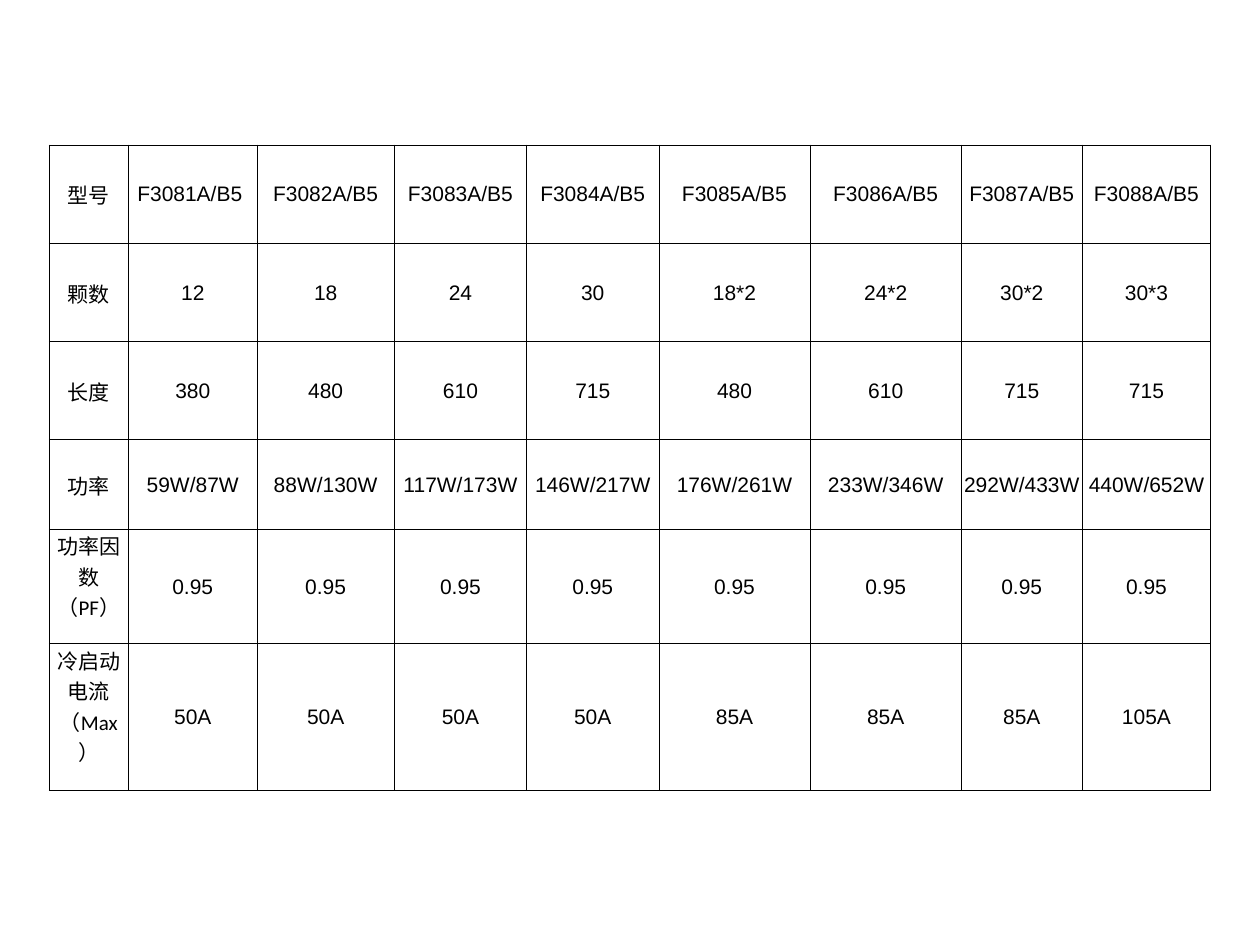
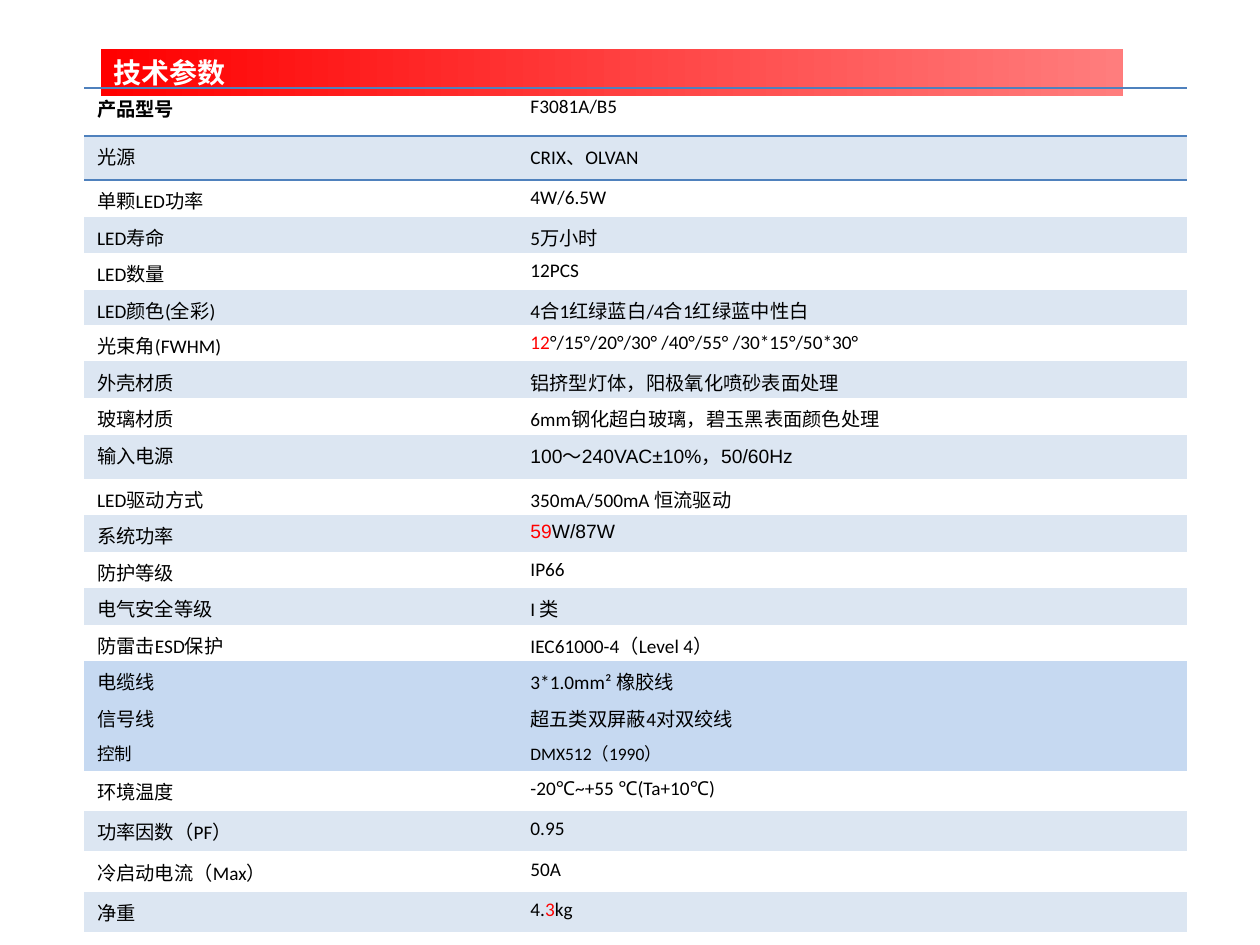
from dataclasses import dataclass
from lxml.etree import SubElement
from pptx import Presentation
from pptx.dml.color import RGBColor
from pptx.enum.text import MSO_ANCHOR, MSO_AUTO_SIZE, PP_ALIGN
from pptx.oxml.ns import qn
from pptx.util import Inches, Pt


@dataclass(frozen=True)
class Theme:
    ink: str = "000000"
    white: str = "FFFFFF"
    accent: str = "FF0000"
    accent_fade: str = "FF7D7D"
    rule: str = "4F81BD"
    pale: str = "DCE6F2"
    cable: str = "C6D9F1"
    sans: str = "Arial"
    body: str = "Calibri"
    chinese: str = "Noto Sans CJK SC"
    title_size: int = 16
    model_size: int = 12
    parameter_size: int = 11
    small_size: int = 10
    plain_table: str = "{2D5ABB26-0587-4C30-8999-92F81FD0307C}"


@dataclass(frozen=True)
class Parameter:
    label: str
    value: tuple
    height: float = 2.9
    fill: str = None
    face: str = Theme.body
    size: int = Theme.parameter_size
    bold: bool = False


class Page:
    columns, rows = 100, 75

    def __init__(self, deck, theme, layout):
        self.deck = deck
        self.theme = theme
        self.slide = deck.slides.add_slide(deck.slide_layouts[layout])

    def across(self, count):
        return round(self.deck.slide_width * count / self.columns)

    def down(self, count):
        return round(self.deck.slide_height * count / self.rows)

    def span(self, para, text, face, size, color, bold=False):
        run = para.add_run()
        run.text = text
        run.font.name = face
        run.font.size = Pt(size)
        run.font.bold = bold
        run.font.color.rgb = RGBColor.from_string(color)
        east_asian = SubElement(run.font._element, qn("a:ea"))
        east_asian.set("typeface", self.theme.chinese)

    def title_band(self, text, left, top, width, height):
        theme = self.theme
        box = self.slide.shapes.title
        box.left, box.top = self.across(left), self.down(top)
        box.width, box.height = self.across(width), self.down(height)
        box.fill.gradient()
        box.fill.gradient_angle = 0
        for stop, color in zip(box.fill.gradient_stops, (theme.accent, theme.accent_fade)):
            stop.color.rgb = RGBColor.from_string(color)
        frame = box.text_frame
        frame.auto_size = MSO_AUTO_SIZE.NONE
        frame.vertical_anchor = MSO_ANCHOR.MIDDLE
        para = frame.paragraphs[0]
        para.alignment = PP_ALIGN.LEFT
        self.span(para, text, theme.chinese, theme.title_size, theme.white, True)

    def table(self, left, top, widths, heights):
        frame = self.slide.shapes.add_table(
            len(heights), len(widths), self.across(left), self.down(top),
            self.across(sum(widths)), self.down(sum(heights)))
        table = frame.table
        table.first_row = table.horz_banding = False
        table._tbl.tblPr.find(qn("a:tableStyleId")).text = self.theme.plain_table
        for column, width in zip(table.columns, widths):
            column.width = self.across(width)
        for row, height in zip(table.rows, heights):
            row.height = self.down(height)
        return table

    def cell(self, cell, parts, face, size, bold=False, fill=None, align=PP_ALIGN.LEFT,
             anchor=MSO_ANCHOR.TOP, margins=(0.1, 0.05, 0.1, 0), sides="", line=0, color=None):
        cell.margin_left, cell.margin_top, cell.margin_right, cell.margin_bottom = map(Inches, margins)
        cell.vertical_anchor = anchor
        properties = cell._tc.get_or_add_tcPr()
        for side in sides:
            border = SubElement(properties, qn(f"a:ln{side}"), w=str(Pt(line)))
            solid = SubElement(border, qn("a:solidFill"))
            SubElement(solid, qn("a:srgbClr"), val=color)
        if fill:
            cell.fill.solid()
            cell.fill.fore_color.rgb = RGBColor.from_string(fill)
        else:
            cell.fill.background()
        para = cell.text_frame.paragraphs[0]
        para.alignment = align
        for index, text in enumerate(parts):
            if text:
                ink = self.theme.accent if index % 2 else self.theme.ink
                self.span(para, text, face, size, ink, bold)


MODELS = (
    ("型号", "F3081A/B5 ", *(f"F308{number}A/B5" for number in range(2, 9))),
    ("颗数", "12", "18", "24", "30", "18*2", "24*2", "30*2", "30*3"),
    ("长度", "380", "480", "610", "715", "480", "610", "715", "715"),
    ("功率", "59W/87W", "88W/130W", "117W/173W", "146W/217W", "176W/261W",
     "233W/346W", "292W/433W", "440W/652W"),
    ("功率因数（PF）", *["0.95"] * 8),
    ("冷启动电流（Max）", *["50A"] * 4, *["85A"] * 3, "105A"),
)

PALE, CABLE = Theme.pale, Theme.cable
PARAMETERS = (
    Parameter("产品型号", ("F3081A/B5",), 3.8, bold=True),
    Parameter("光源", ("CRIX、OLVAN",), 3.5, PALE),
    Parameter("单颗LED功率", ("4W/6.5W",)),
    Parameter("LED寿命", ("5万小时",), fill=PALE),
    Parameter("LED数量", ("12PCS",)),
    Parameter("LED颜色(全彩)", ("4合1红绿蓝白/4合1红绿蓝中性白",), 2.8, PALE),
    Parameter("光束角(FWHM)", ("", "12", "°/15°/20°/30° /40°/55° /30*15°/50*30°")),
    Parameter("外壳材质", ("铝挤型灯体，阳极氧化喷砂表面处理",), fill=PALE),
    Parameter("玻璃材质", ("6mm钢化超白玻璃，碧玉黑表面颜色处理",)),
    Parameter("输入电源", ("100～240VAC±10%，50/60Hz",), 3.5, PALE, Theme.sans),
    Parameter("LED驱动方式", ("350mA/500mA 恒流驱动",)),
    Parameter("系统功率", ("", "59", "W/87W"), fill=PALE, face=Theme.sans),
    Parameter("防护等级", ("IP66",)),
    Parameter("电气安全等级", ("I 类",), fill=PALE),
    Parameter("防雷击ESD保护", ("IEC61000-4（Level 4）",)),
    Parameter("电缆线", ("3*1.0mm² 橡胶线",), fill=CABLE),
    Parameter("信号线", ("超五类双屏蔽4对双绞线",), fill=CABLE),
    Parameter("控制", ("DMX512（1990）",), fill=CABLE, size=Theme.small_size),
    Parameter("环境温度", ("-20℃~+55 ℃(Ta+10℃)",), 3.2),
    Parameter("功率因数（PF）", ("0.95",), 3.2, PALE),
    Parameter("冷启动电流（Max）", ("50A",), 3.2),
    Parameter("净重", ("4.", "3", "kg"), 3.2, PALE),
)


def model_page(deck, theme):
    page = Page(deck, theme, 6)
    widths = (6.3, 10.2, 10.9, 10.5, 10.5, 12, 12, 9.6, 10.2)
    table = page.table(3.9, 11.5, widths, (7.8, 7.8, 7.8, 7.1, 9.1, 11.6))
    for row, texts in enumerate(MODELS):
        for column, text in enumerate(texts):
            long_label = column == 0 and len(text) > 2
            page.cell(table.cell(row, column), (text,),
                      theme.body if long_label else theme.sans, theme.model_size,
                      align=PP_ALIGN.CENTER,
                      anchor=MSO_ANCHOR.TOP if long_label else MSO_ANCHOR.MIDDLE,
                      margins=(0.01, 0.01, 0.01, 0), sides="LRTB", line=0.5, color=theme.ink)


def parameter_page(deck, theme):
    page = Page(deck, theme, 5)
    page.title_band("技术参数", 8, 3.9, 81.1, 3.7)
    table = page.table(6.7, 7, (34.4, 53.1), [item.height for item in PARAMETERS])
    borders = {0: "TB", 1: "T"}
    for row, item in enumerate(PARAMETERS):
        for column, parts in enumerate(((item.label,), item.value)):
            page.cell(table.cell(row, column), parts, item.face, item.size,
                      item.bold and column == 0, item.fill,
                      sides=borders.get(row, ""), line=1, color=theme.rule)


def main():
    deck = Presentation()
    deck.slide_width, deck.slide_height = Inches(10), Inches(7.5)
    theme = Theme()
    model_page(deck, theme)
    parameter_page(deck, theme)
    deck.save("out.pptx")


if __name__ == "__main__":
    main()
